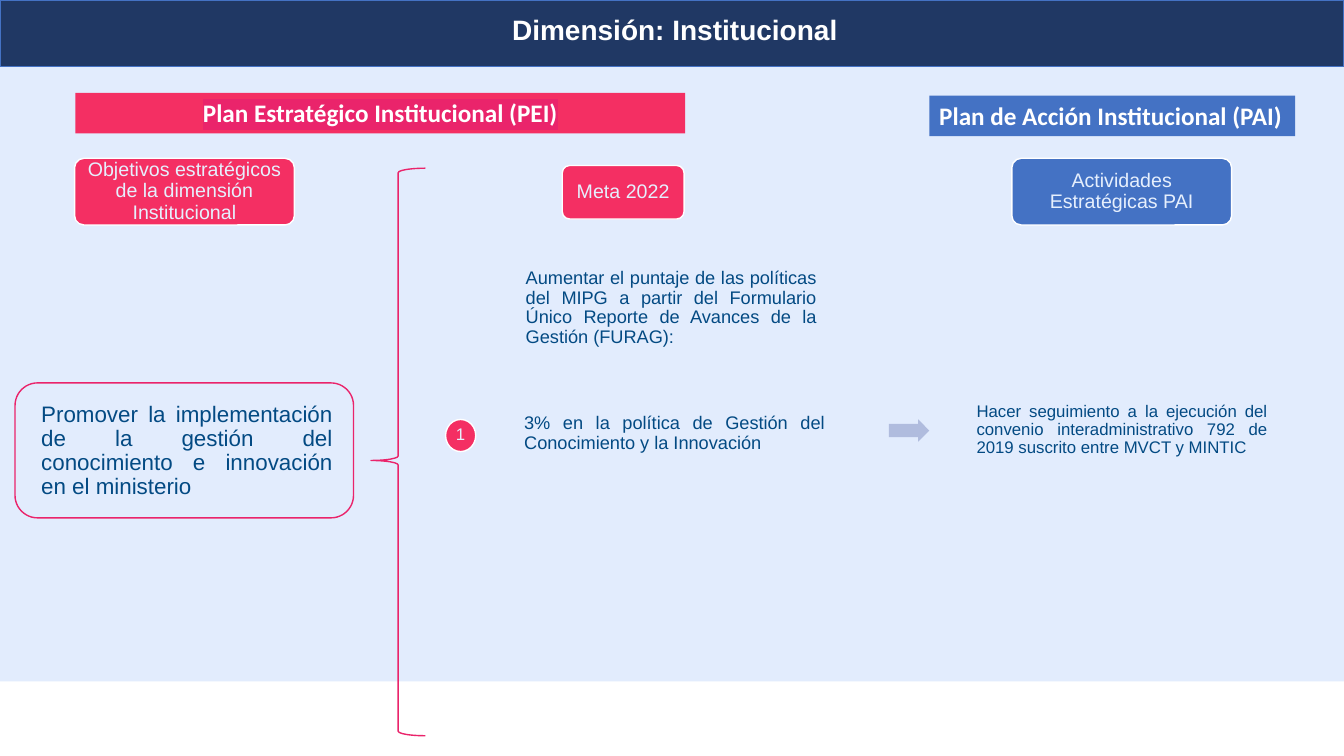
from lxml import etree
from pptx import Presentation
from pptx import util as u
from pptx.dml.color import RGBColor
from pptx.enum import shapes, text
from pptx.oxml import ns

WHITE = RGBColor(0xFF, 0xFF, 0xFF)
SKY = RGBColor(0xE2, 0xEC, 0xFD)
PALE = RGBColor(0xE6, 0xEF, 0xFD)
NAVY = RGBColor(0x20, 0x38, 0x64)
BLUE = RGBColor(0x44, 0x72, 0xC4)
LILAC = RGBColor(0xB0, 0xBC, 0xDE)
INK = RGBColor(0x03, 0x4A, 0x83)
RED = RGBColor(0xF4, 0x2F, 0x63)
MAGENTA = RGBColor(0xEA, 0x24, 0x6B)

KIND = shapes.MSO_SHAPE
ALIGN = text.PP_ALIGN


class PlanSlide:
    body_font = "Arial"
    heading_font = "Calibri"
    line_width = u.Pt(1)

    def __init__(self, presentation):
        self.slide = presentation.slides.add_slide(presentation.slide_layouts[5])
        self.slide.background.fill.solid()
        self.slide.background.fill.fore_color.rgb = SKY

    def set_text(self, shape, words, size, color, align, bold=False, font=None,
                 spacing=0.9, inset=None, anchor=text.MSO_ANCHOR.MIDDLE, wrap=True):
        """Put one formatted paragraph in a shape; inset None keeps the default margins."""
        frame = shape.text_frame
        frame.word_wrap = wrap
        frame.auto_size = text.MSO_AUTO_SIZE.NONE
        frame.vertical_anchor = anchor
        if inset is not None:
            frame.margin_left = frame.margin_right = u.Cm(inset)
            frame.margin_top = frame.margin_bottom = u.Cm(inset)
        frame.text = words
        paragraph = frame.paragraphs[0]
        paragraph.alignment = align
        paragraph.line_spacing = spacing
        paragraph.font.name = font or self.body_font
        paragraph.font.size = u.Pt(size)
        paragraph.font.bold = bold
        paragraph.font.color.rgb = color
        return paragraph

    def title(self, words, *box):
        """Format the title placeholder and bring it in front of the banner."""
        title = self.slide.shapes.title
        title.left, title.top, title.width, title.height = map(u.Cm, box)
        self.set_text(title, words, 20, WHITE, ALIGN.LEFT, bold=True)
        title.element.getparent().append(title.element)

    def shape(self, kind, *box, fill=None, line=None, adjustments=()):
        shape = self.slide.shapes.add_shape(kind, *map(u.Cm, box))
        shape.shadow.inherit = False
        for number, value in enumerate(adjustments):
            shape.adjustments[number] = value
        if fill is None:
            shape.fill.background()
        else:
            shape.fill.solid()
            shape.fill.fore_color.rgb = fill
        if line is None:
            shape.line.fill.background()
        else:
            shape.line.color.rgb = line
            shape.line.width = self.line_width
        return shape

    def card(self, words, *box, fill, kind=KIND.ROUNDED_RECTANGLE, size=14):
        rounding = (0.14,) if kind == KIND.ROUNDED_RECTANGLE else ()
        shape = self.shape(kind, *box, fill=fill, line=WHITE, adjustments=rounding)
        self.set_text(shape, words, size, PALE, ALIGN.CENTER, inset=0.15)

    def heading(self, words, *box, fill, align, wrap=True, highlight=None):
        shape = self.shape(KIND.RECTANGLE, *box, fill=fill)
        paragraph = self.set_text(shape, words, 18, WHITE, align, bold=True,
                                  font=self.heading_font, spacing=1.0,
                                  anchor=text.MSO_ANCHOR.TOP, wrap=wrap)
        if highlight is not None:
            properties = paragraph.runs[0]._r.get_or_add_rPr()
            marker = etree.SubElement(properties, ns.qn("a:highlight"))
            etree.SubElement(marker, ns.qn("a:srgbClr"), val=str(highlight))

    def note(self, words, *box, size, **style):
        shape = self.slide.shapes.add_textbox(*map(u.Cm, box))
        self.set_text(shape, words, size, INK, ALIGN.JUSTIFY, **style)


def main():
    presentation = Presentation()
    presentation.slide_width = u.Cm(33.87)
    presentation.slide_height = u.Cm(19.05)
    plan = PlanSlide(presentation)

    plan.shape(KIND.RECTANGLE, 0, 17.17, 33.87, 1.88, fill=WHITE)
    plan.shape(KIND.RECTANGLE, 0, 0, 33.87, 1.68, fill=NAVY, line=BLUE)
    plan.title("Dimensión: Institucional", 12.65, 0.33, 12.34, 0.91)

    plan.heading("Plan Estratégico Institucional (PEI)", 1.9, 2.34, 15.37, 1.02,
                 fill=RED, align=ALIGN.CENTER, highlight=MAGENTA)
    plan.heading("Plan de Acción Institucional (PAI)", 23.42, 2.41, 9.22, 1.02,
                 fill=BLUE, align=ALIGN.LEFT, wrap=False)

    plan.card("Objetivos estratégicos de la dimensión Institucional",
              1.88, 3.99, 5.54, 1.68, fill=RED)
    plan.card("Meta 2022", 14.17, 4.17, 3.07, 1.35, fill=RED)
    plan.card("Actividades Estratégicas PAI", 25.5, 3.99, 5.54, 1.68, fill=BLUE)

    plan.shape(KIND.ROUNDED_RECTANGLE, 0.38, 9.65, 8.53, 3.4, line=MAGENTA)
    plan.note("Promover la implementación de la gestión del conocimiento e innovación "
              "en el ministerio", 0.99, 9.7, 7.44, 3.35, size=16, inset=0.05)
    plan.shape(KIND.LEFT_BRACE, 9.35, 4.24, 1.37, 14.3, line=MAGENTA,
               adjustments=(0.083, 0.515))

    plan.note("Aumentar el puntaje de las políticas del MIPG a partir del Formulario Único "
              "Reporte de Avances de la Gestión (FURAG):", 13, 6.65, 7.82, 2.26,
              size=13, anchor=text.MSO_ANCHOR.TOP)
    plan.card("1", 11.23, 10.57, 0.76, 0.81, fill=RED, kind=KIND.OVAL, size=12)
    plan.note("3% en la política de Gestión del Conocimiento y la Innovación",
              13.16, 9.7, 7.67, 2.46, size=13, inset=0.05)
    plan.shape(KIND.RIGHT_ARROW, 22.4, 10.57, 1.02, 0.56, fill=LILAC,
               adjustments=(0.6, 0.5))
    plan.note("Hacer seguimiento a la ejecución del convenio interadministrativo 792 de 2019 "
              "suscrito entre MVCT y MINTIC", 24.56, 9.35, 7.44, 2.97, size=12, inset=0.05)

    presentation.save("out.pptx")


if __name__ == "__main__":
    main()
